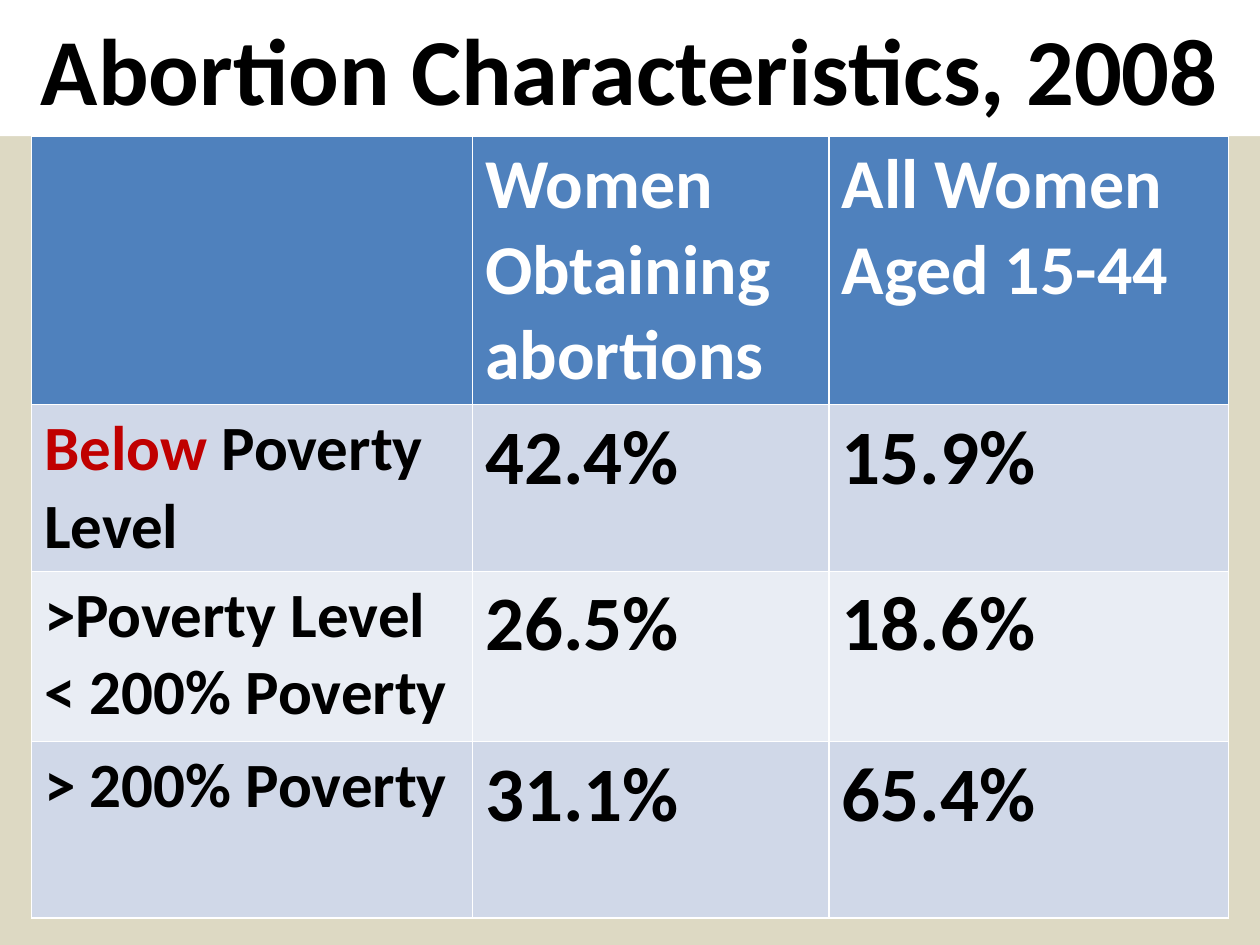
from pptx import Presentation
from pptx.dml.color import RGBColor
from pptx.enum.text import MSO_ANCHOR as Anchor, PP_ALIGN as Align
from pptx.util import Inches, Pt

FONT = "Calibri"
BLACK, WHITE, RED = "000000", "FFFFFF", "C00000"
HEADER_FILL, BAND_FILLS = "4F81BD", ("D0D8E8", "E9EDF4")
COLUMN_WIDTHS = (3.5, 2.83, 3.17)
ROW_HEIGHTS = (2.04, 1.26, 1.35, 1.4)
ROWS = (
    ("", "Women Obtaining abortions", "All Women Aged 15-44"),
    ("Below Poverty Level", "42.4%", "15.9%"),
    (">Poverty Level\n< 200% Poverty", "26.5%", "18.6%"),
    ("> 200% Poverty", "31.1%", "65.4%"),
)


def paint(fill, color):
    """Make a fill solid in the given hex colour."""
    fill.solid()
    fill.fore_color.rgb = RGBColor.from_string(color)


def style_paragraph(paragraph, size, color):
    """Set the bold slide font on a paragraph."""
    font = paragraph.font
    font.name, font.size, font.bold = FONT, Pt(size), True
    font.color.rgb = RGBColor.from_string(color)


def add_title(slide, text, left, top, width, height):
    """Place the title placeholder as a white band."""
    title = slide.shapes.title
    title.left, title.top = Inches(left), Inches(top)
    title.width, title.height = Inches(width), Inches(height)
    paint(title.fill, WHITE)
    frame = title.text_frame
    frame.text = text
    frame.word_wrap = True
    frame.vertical_anchor = Anchor.MIDDLE
    frame.paragraphs[0].alignment = Align.CENTER
    style_paragraph(frame.paragraphs[0], 54, BLACK)


def fill_cell(cell, text, row, column):
    """Write and format one cell according to its row and column."""
    is_header = row == 0
    paint(cell.fill, HEADER_FILL if is_header else BAND_FILLS[(row - 1) % 2])
    size = 40 if is_header else 36 if column == 0 else 44
    cell.text_frame.text = text
    for paragraph in cell.text_frame.paragraphs:
        style_paragraph(paragraph, size, WHITE if is_header else BLACK)


def highlight_first_word(paragraph, color):
    """Split off the first word of a paragraph and colour it."""
    first, rest = paragraph.text.split(" ", 1)
    paragraph.runs[0].text = first
    paragraph.runs[0].font.color.rgb = RGBColor.from_string(color)
    paragraph.add_run().text = f" {rest}"


def add_poverty_table(slide, left, top, width, height):
    """Add the table of poverty levels, with shares of each group."""
    table = slide.shapes.add_table(
        len(ROWS), len(COLUMN_WIDTHS),
        Inches(left), Inches(top), Inches(width), Inches(height),
    ).table
    for column, column_width in zip(table.columns, COLUMN_WIDTHS):
        column.width = Inches(column_width)
    for row, row_height in zip(table.rows, ROW_HEIGHTS):
        row.height = Inches(row_height)
    for row, texts in enumerate(ROWS):
        for column, text in enumerate(texts):
            fill_cell(table.cell(row, column), text, row, column)
    highlight_first_word(table.cell(1, 0).text_frame.paragraphs[0], RED)


def main():
    """Build and save the slide."""
    presentation = Presentation()
    presentation.slide_width, presentation.slide_height = Inches(10), Inches(7.5)
    slide = presentation.slides.add_slide(presentation.slide_layouts[5])
    paint(slide.background.fill, "DDD9C3")
    add_title(slide, "Abortion Characteristics, 2008", 0, 0, 10, 1.08)
    add_poverty_table(slide, 0.25, 1.08, sum(COLUMN_WIDTHS), sum(ROW_HEIGHTS))
    presentation.save("out.pptx")


if __name__ == "__main__":
    main()
